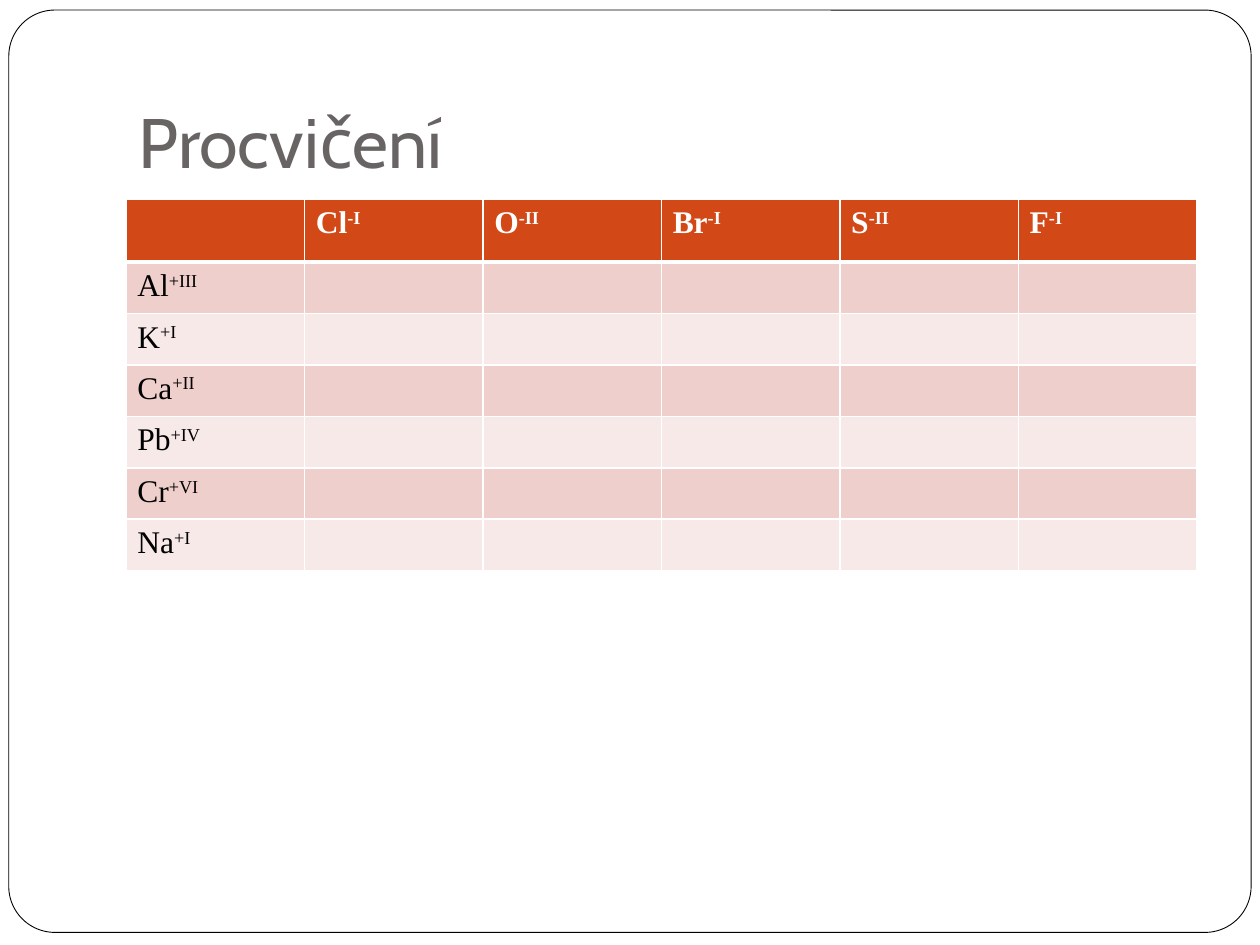
from dataclasses import dataclass

from lxml import etree
from pptx import Presentation
from pptx import util as u
from pptx.dml.color import RGBColor
from pptx.enum import shapes, text
from pptx.oxml import ns

BLACK = "000000"
WHITE = "FFFFFF"
HEADER_FILL = "D34817"
BAND_FILLS = ("EFCFCC", "F7E9E8")
TABLE_FONT = "Times New Roman"
ROW_HEIGHTS = (0.5, 0.41, 0.37, 0.41, 0.41, 0.37, 0.41)
TABLE_WIDTH = 8.5


@dataclass(frozen=True)
class Ion:
    symbol: str
    charge: str


ANIONS = (Ion("Cl", "-I"), Ion("O", "-II"), Ion("Br", "-I"), Ion("S", "-II"), Ion("F", "-I"))
CATIONS = (
    Ion("Al", "+III"),
    Ion("K", "+I"),
    Ion("Ca", "+II"),
    Ion("Pb", "+IV"),
    Ion("Cr", "+VI"),
    Ion("Na", "+I"),
)


def color(value: str) -> RGBColor:
    return RGBColor.from_string(value)


def add_run(paragraph, content: str, font: str, size: float, shade: str, bold: bool = False):
    run = paragraph.add_run()
    run.text = content
    run.font.name = font
    run.font.size = u.Pt(size)
    run.font.bold = bold
    run.font.color.rgb = color(shade)
    return run


def write_ion(cell, ion: Ion, shade: str, bold: bool) -> None:
    paragraph = cell.text_frame.paragraphs[0]
    add_run(paragraph, ion.symbol, TABLE_FONT, 18, shade, bold)
    charge = add_run(paragraph, ion.charge, TABLE_FONT, 18, shade, bold)
    charge._r.get_or_add_rPr().set("baseline", "30000")


def style_cell(cell, fill: str, top: float, bottom: float) -> None:
    cell.margin_left = cell.margin_right = u.Inches(0.09)
    cell.margin_top = cell.margin_bottom = u.Inches(0.05)
    properties = cell._tc.get_or_add_tcPr()
    for side, width in (("L", 1), ("R", 1), ("T", top), ("B", bottom)):
        border = etree.SubElement(properties, ns.qn(f"a:ln{side}"), w=str(u.Pt(width)))
        border_fill = etree.SubElement(border, ns.qn("a:solidFill"))
        etree.SubElement(border_fill, ns.qn("a:srgbClr"), val=WHITE)
    cell.fill.solid()
    cell.fill.fore_color.rgb = color(fill)


def add_title(slide) -> None:
    title = slide.shapes.title
    title.left, title.top = u.Inches(1), u.Inches(0.3)
    title.width, title.height = u.Inches(8.5), u.Inches(1.25)
    frame = title.text_frame
    frame.word_wrap = True
    frame.auto_size = text.MSO_AUTO_SIZE.NONE
    frame.vertical_anchor = text.MSO_ANCHOR.BOTTOM
    frame.margin_left = frame.margin_right = frame.margin_bottom = u.Inches(0.1)
    frame.margin_top = u.Inches(0.05)
    paragraph = frame.paragraphs[0]
    paragraph.alignment = text.PP_ALIGN.LEFT
    add_run(paragraph, "Procvičení", "Cabin", 40, "696464")


def add_border(slide) -> None:
    shape = slide.shapes.add_shape(
        shapes.MSO_SHAPE.ROUNDED_RECTANGLE,
        u.Inches(0.07), u.Inches(0.08), u.Inches(9.86), u.Inches(7.32),
    )
    shape.adjustments[0] = 0.05
    shape.shadow.inherit = False
    shape.fill.solid()
    shape.fill.fore_color.rgb = color(WHITE)
    shape.line.color.rgb = color(BLACK)
    shape.line.width = u.Pt(0.5)
    slide.shapes.title.element.addprevious(shape.element)


def add_ion_table(slide) -> None:
    column_count = len(ANIONS) + 1
    table = slide.shapes.add_table(
        len(CATIONS) + 1, column_count,
        u.Inches(1), u.Inches(1.58), u.Inches(TABLE_WIDTH), u.Inches(sum(ROW_HEIGHTS)),
    ).table
    for column in table.columns:
        column.width = u.Inches(TABLE_WIDTH / column_count)
    for index, (row, height) in enumerate(zip(table.rows, ROW_HEIGHTS)):
        row.height = u.Inches(height)
        fill = BAND_FILLS[(index - 1) % 2] if index else HEADER_FILL
        for cell in row.cells:
            style_cell(cell, fill, 3 if index == 1 else 1, 3 if index == 0 else 1)
    for index, anion in enumerate(ANIONS, 1):
        write_ion(table.cell(0, index), anion, WHITE, True)
    for index, cation in enumerate(CATIONS, 1):
        write_ion(table.cell(index, 0), cation, BLACK, False)


def main() -> None:
    presentation = Presentation()
    presentation.slide_width = u.Inches(10)
    presentation.slide_height = u.Inches(7.5)
    slide = presentation.slides.add_slide(presentation.slide_layouts[5])
    slide.background.fill.solid()
    slide.background.fill.fore_color.rgb = color(WHITE)
    add_title(slide)
    add_border(slide)
    add_ion_table(slide)
    presentation.save("out.pptx")


if __name__ == "__main__":
    main()
